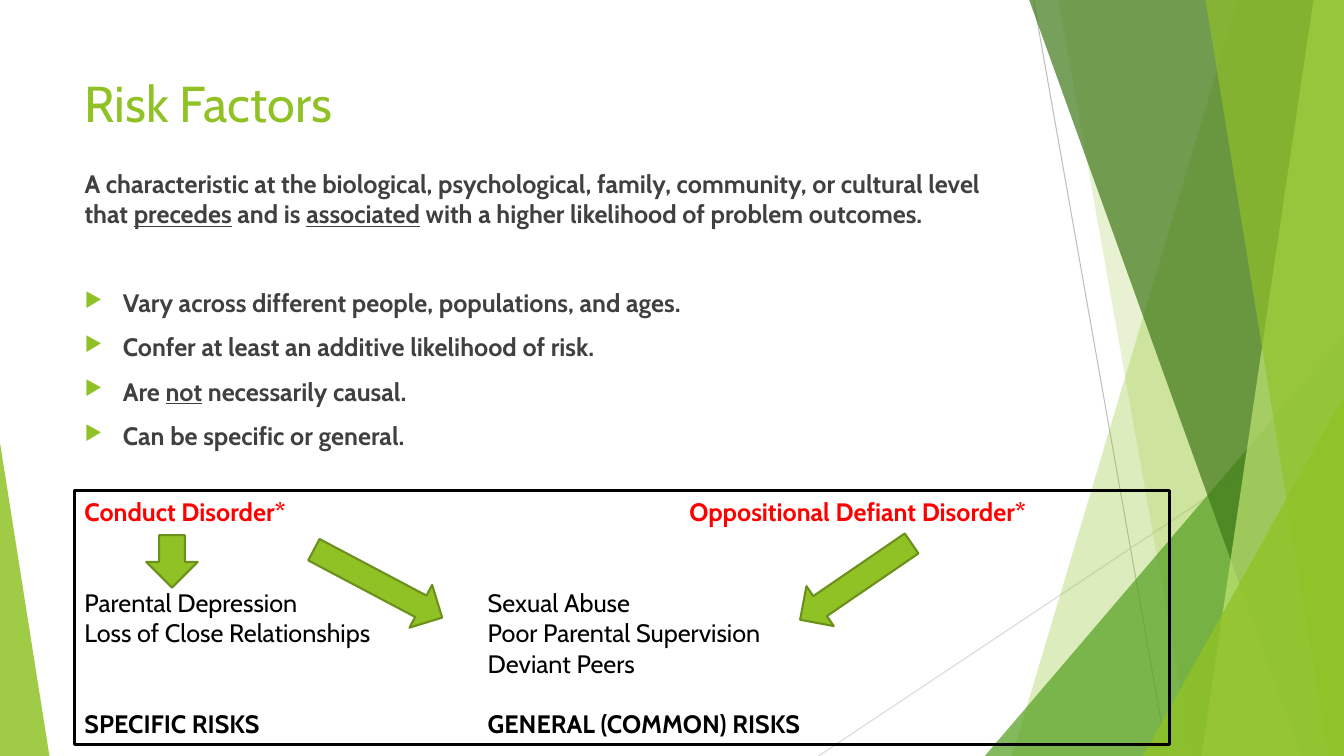
import pptx
import pptx.util
import pptx.dml.color
import pptx.enum.shapes
import pptx.enum.text
import pptx.oxml.ns
from dataclasses import dataclass
from lxml import etree
from pptx.util import Emu, Inches, Pt

SHAPE = pptx.enum.shapes.MSO_SHAPE


@dataclass(frozen=True)
class Theme:
    font: str = "Cabin"
    title: int = 36
    text: int = 18
    lime: str = "90C226"
    leaf: str = "54A021"
    forest: str = "3F7819"
    pale: str = "C0E474"
    olive: str = "6B901C"
    grey: str = "404040"
    red: str = "FF0000"
    black: str = "000000"


T = Theme()
W, H = Inches(13.333), Inches(7.5)

# Content: text between underscores is underlined
TITLE = "Risk Factors"
DEFINITION = ("A characteristic at the biological, psychological, family, community, or cultural "
              "level that _precedes_ and is _associated_ with a higher likelihood of problem outcomes.")
TRAITS = [
    "Vary across different people, populations, and ages.",
    "Confer at least an additive likelihood of risk.",
    "Are _not_ necessarily causal.",
    "Can be specific or general.",
]
# left text, right text, tab stop (inches), colour, bold, blank lines before
RISKS = [
    ("Conduct Disorder*", "Oppositional Defiant Disorder*", 6, T.red, True, 0),
    ("Parental Depression", "Sexual Abuse", 4, T.black, False, 2),
    ("Loss of Close Relationships", "Poor Parental Supervision", 4, T.black, False, 0),
    ("", "Deviant Peers", 4, T.black, False, 0),
    ("SPECIFIC RISKS", "GENERAL (COMMON) RISKS", 4, T.black, True, 1),
]

# Places, in percent of the slide's width and height
LEFT, COLUMN = 5.55, 70.5
TITLE_AT = (LEFT, 8.93, COLUMN, 19.2)
BODY_AT = (LEFT, 21.6, COLUMN, 56.53)
RISKS_AT = (LEFT, 64.93, 81.45, 33.6)
ARROWS = [  # left, top, width, height, rotation
    (26.33, 67.6, 3.6, 19.2, 297.9),
    (61.88, 68, 3.6, 17.87, 55.6),
    (10.88, 70.8, 3.83, 6.93, 0),
]
HAIRLINES = [(76.9, 0, 86.85, 100, "BFBFBF"), (100, 53.73, 60.9, 100, "D9D9D9")]
# "band": top x, bottom x, reaching the right edge
# "wedge": left, right, top, tip position, reaching the bottom edge
FACETS = [
    ("band", (92.1, 75.3), T.lime, 30),
    ("band", (78.75, 88.73), T.lime, 20),
    ("wedge", (73.28, 100, 44.4, 1), T.leaf, 72),
    ("band", (76.58, 96.83), T.forest, 70),
    ("band", (97.73, 89.4), T.pale, 70),
    ("band", (89.7, 98.85), T.lime, 65),
    ("wedge", (85.05, 100, 52.4, 1), T.lime, 80),
    ("wedge", (0, 3.68, 58.53, 0), T.lime, 85),
]
LINE_PT = 21.9  # height of one line of text
GAP_PT = 10


def rgb(c):
    return pptx.dml.color.RGBColor.from_string(c)


def at(x, y):
    return Emu(round(W * x / 100)), Emu(round(H * y / 100))


def place(x, y, w, h):
    return at(x, y) + at(w, h)


def child(parent, tag, **attrs):
    return etree.SubElement(parent, pptx.oxml.ns.qn(tag), **attrs)


def paint(sp, fill=None, alpha=100, line=None, width=0):
    sp.shadow.inherit = False
    if fill:
        sp.fill.solid()
        sp.fill.fore_color.rgb = rgb(fill)
        if alpha < 100:
            clr = sp.fill._xPr.find(".//" + pptx.oxml.ns.qn("a:srgbClr"))
            child(clr, "a:alpha", val=str(alpha * 1000))
    else:
        sp.fill.background()
    if line:
        sp.line.color.rgb = rgb(line)
        sp.line.width = Pt(width)
    else:
        sp.line.fill.background()


def write(p, text, color, size=T.text, bold=False):
    for i, part in enumerate(text.split("_")):
        if part:
            r = p.add_run()
            r.text = part
            f = r.font
            f.name, f.size, f.bold = T.font, Pt(size), bold
            f.color.rgb = rgb(color)
            if i % 2:
                f.underline = True


def frame(sp):
    tf = sp.text_frame
    tf.word_wrap = True
    tf.vertical_anchor = pptx.enum.text.MSO_ANCHOR.TOP
    return tf


def next_paragraph(tf, i):
    p = tf.add_paragraph() if i else tf.paragraphs[0]
    p.alignment = pptx.enum.text.PP_ALIGN.LEFT
    return p


prs = pptx.Presentation()
prs.slide_width, prs.slide_height = W, H
s = prs.slides.add_slide(prs.slide_layouts[6])

# Background lines and facets
for x1, y1, x2, y2, color in HAIRLINES:
    ln = s.shapes.add_connector(pptx.enum.shapes.MSO_CONNECTOR.STRAIGHT, *at(x1, y1), *at(x2, y2))
    ln.line.color.rgb = rgb(color)
    ln.line.width = Pt(0.75)
    child(ln._element.spPr, "a:effectLst")

for kind, geometry, color, alpha in FACETS:
    if kind == "band":
        top, bottom = geometry
        fb = s.shapes.build_freeform(*at(top, 0))
        fb.add_line_segments([at(100, 0), at(100, 100), at(bottom, 100)], close=True)
        sp = fb.convert_to_shape()
    else:
        left, right, top, tip = geometry
        sp = s.shapes.add_shape(SHAPE.ISOSCELES_TRIANGLE, *place(left, top, right - left, 100 - top))
        sp.adjustments[0] = tip
    paint(sp, color, alpha)

# Title
tf = frame(s.shapes.add_textbox(*place(*TITLE_AT)))
write(tf.paragraphs[0], TITLE, T.lime, T.title)

# Definition and bullets
tf = frame(s.shapes.add_textbox(*place(*BODY_AT)))
write(tf.paragraphs[0], DEFINITION, T.grey, bold=True)
for i, trait in enumerate(TRAITS):
    p = next_paragraph(tf, i + 1)
    p.space_before = Pt(GAP_PT if i else 2 * GAP_PT + LINE_PT)
    pPr = p._p.get_or_add_pPr()
    pPr.set("marL", str(Inches(0.38)))
    pPr.set("indent", str(-Inches(0.38)))
    child(child(pPr, "a:buClr"), "a:srgbClr", val=T.lime)
    child(pPr, "a:buSzPct", val="80000")
    child(pPr, "a:buChar", char="▶")
    write(p, trait, T.grey, bold=True)

# Framed risks, in tabbed columns
sp = s.shapes.add_shape(SHAPE.RECTANGLE, *place(*RISKS_AT))
paint(sp, line=T.black, width=2.25)
tf = frame(sp)
for i, (left, right, stop, color, bold, blanks) in enumerate(RISKS):
    p = next_paragraph(tf, i)
    p.space_before = Pt(blanks * LINE_PT)
    tabs = child(p._p.get_or_add_pPr(), "a:tabLst")
    child(tabs, "a:tab", pos=str(Inches(stop)), algn="l")
    write(p, left + "\t" + right, color, bold=bold)

# Arrows
for *box, rotation in ARROWS:
    sp = s.shapes.add_shape(SHAPE.DOWN_ARROW, *place(*box))
    sp.rotation = rotation
    paint(sp, T.lime, line=T.olive, width=1.5)

prs.save("out.pptx")
